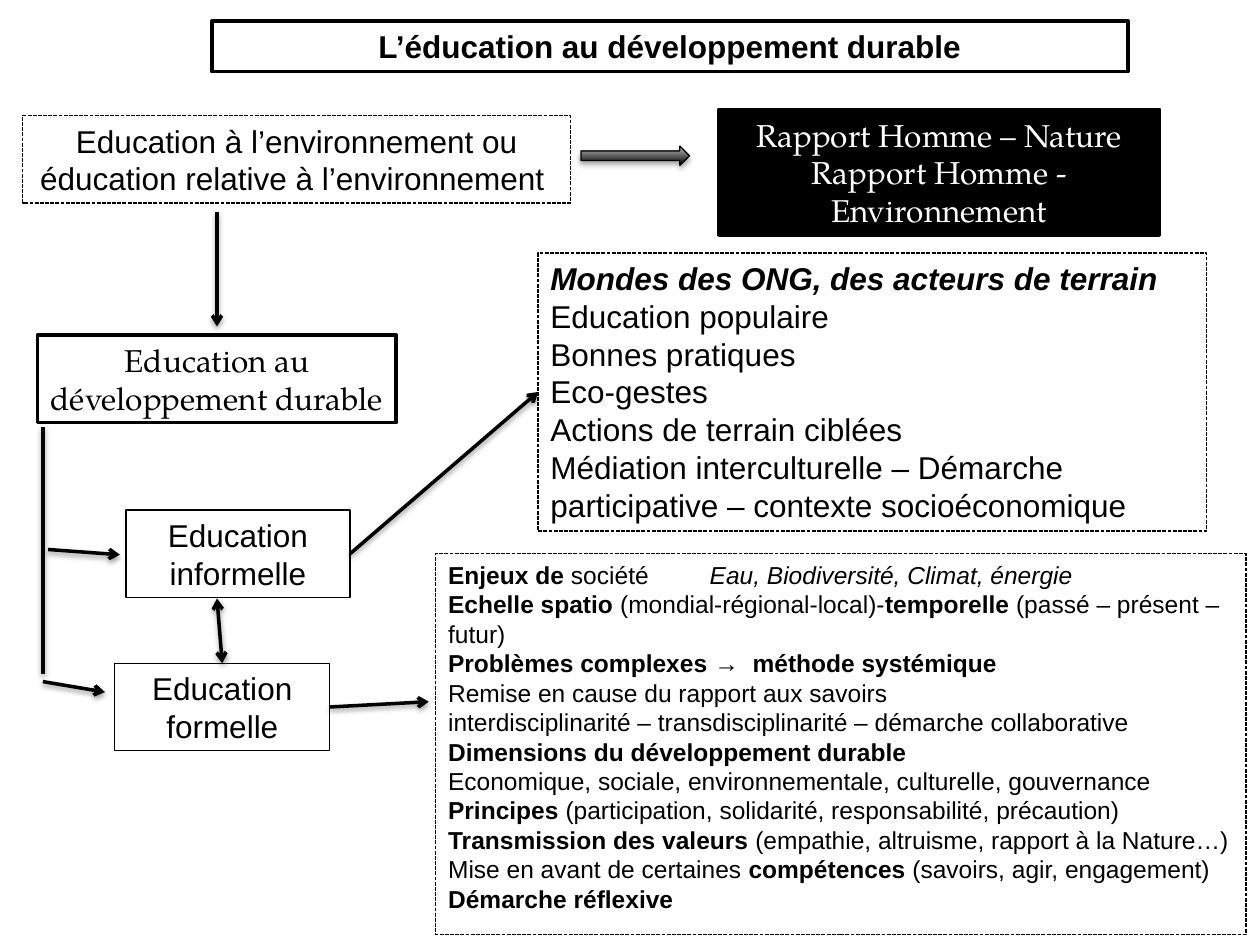
from lxml import etree
from pptx import Presentation
from pptx.dml.color import RGBColor
from pptx.enum.dml import MSO_LINE
from pptx.enum.shapes import MSO_CONNECTOR, MSO_SHAPE
from pptx.enum.text import MSO_ANCHOR, MSO_AUTO_SIZE, PP_ALIGN
from pptx.oxml.ns import qn
from pptx.util import Pt

STRAIGHT = MSO_CONNECTOR.STRAIGHT
DASH = MSO_LINE.SQUARE_DOT
LEFT, CENTER, JUSTIFY = PP_ALIGN.LEFT, PP_ALIGN.CENTER, PP_ALIGN.JUSTIFY
TOP_SIDE, LEFT_SIDE, BOTTOM_SIDE, RIGHT_SIDE = range(4)
COLORS = {"ink": "000000", "paper": "FFFFFF", "grey": "BDBDBD"}
RGB = {name: RGBColor.from_string(value) for name, value in COLORS.items()}
SANS, SERIF = "Arial", "TeX Gyre Pagella"


def write_box(box, paragraphs, align=CENTER, size=18, font=SANS, ink="ink",
              fill=None, weight=0.75, dash=None):
    """Frame a box and write its paragraphs, each a list of (text, style) runs."""
    if fill:
        box.fill.solid()
        box.fill.fore_color.rgb = RGB[fill]
    box.line.color.rgb = RGB["ink"]
    box.line.width = Pt(weight)
    if dash:
        box.line.dash_style = dash
    frame = box.text_frame
    frame.word_wrap = True
    frame.auto_size = MSO_AUTO_SIZE.NONE
    frame.vertical_anchor = MSO_ANCHOR.TOP
    for number, runs in enumerate(paragraphs):
        paragraph = frame.add_paragraph() if number else frame.paragraphs[0]
        paragraph.alignment = align
        for text, style in runs:
            run = paragraph.add_run()
            run.text = text
            run.font.name = font
            run.font.size = Pt(size)
            run.font.bold = "b" in style
            run.font.italic = "i" in style
            run.font.color.rgb = RGB[ink]


def add_shadow(shape, blur, distance, opacity):
    """Cast a soft black shadow straight down."""
    properties = shape._element.spPr
    for old in properties.findall(qn("a:effectLst")):
        properties.remove(old)
    effects = etree.SubElement(properties, qn("a:effectLst"))
    shadow = etree.SubElement(effects, qn("a:outerShdw"), blurRad=str(Pt(blur)),
                              dist=str(Pt(distance)), dir="5400000", rotWithShape="0")
    color = etree.SubElement(shadow, qn("a:srgbClr"), val=COLORS["ink"])
    etree.SubElement(color, qn("a:alpha"), val=str(opacity * 1000))


prs = Presentation()
prs.slide_width, prs.slide_height = Pt(720), Pt(540)
slide = prs.slides.add_slide(prs.slide_layouts[5])

title = slide.shapes.title
title.left, title.top, title.width, title.height = Pt(121), Pt(12), Pt(523.5), Pt(29)
write_box(title, [[("L’éducation au développement durable", "b")]],
          fill="paper", weight=2)

ngo_world = [
    [("Mondes des ONG, des acteurs de terrain", "bi")],
    [("Education populaire", "")],
    [("Bonnes pratiques", "")],
    [("Eco-gestes", "")],
    [("Actions de terrain ciblées", "")],
    [("Médiation interculturelle – Démarche participative – contexte socioéconomique", "")],
]
school_content = [
    [("Enjeux de ", "b"), ("société\t", ""), ("Eau, Biodiversité, Climat, énergie", "i")],
    [("Echelle spatio ", "b"), ("(mondial-régional-local)-", ""), ("temporelle", "b"),
     (" (passé – présent – futur)", "")],
    [("Problèmes complexes ", "b"), ("→  ", ""), ("méthode systémique", "b")],
    [("Remise en cause du rapport aux savoirs", "")],
    [("interdisciplinarité – transdisciplinarité – démarche collaborative", "")],
    [("Dimensions du développement durable", "b")],
    [("Economique, sociale, environnementale, culturelle, gouvernance", "")],
    [("Principes", "b"), (" (participation, solidarité, responsabilité, précaution)", "")],
    [("Transmission des valeurs ", "b"), ("(empathie, altruisme, rapport à la Nature…)", "")],
    [("Mise en avant de certaines ", ""), ("compétences", "b"),
     (" (savoirs, agir, engagement)", "")],
    [("Démarche réflexive", "b")],
]

# name: (left, top, width, height), paragraphs, formatting
contents = {
    "sustainable": ((21.5, 191.5, 205, 50), [[("Education au développement durable", "")]],
                    dict(font=SERIF, fill="paper", weight=2)),
    "environment": ((13, 66, 313, 50),
                    [[("Education à l’environnement ou éducation relative à l’environnement ", "")]],
                    dict(dash=DASH)),
    "relation": ((411, 62.5, 251.5, 72),
                 [[("Rapport Homme – Nature", "")], [("Rapport Homme - Environnement", "")]],
                 dict(font=SERIF, ink="paper", fill="ink", weight=2)),
    "formal": ((65.5, 379, 123, 50), [[("Education formelle", "")]], {}),
    "informal": ((72, 291.5, 128, 50), [[("Education informelle", "")]], {}),
    "ngo": ((307.5, 144.5, 382, 159), ngo_world, dict(align=LEFT, dash=DASH)),
    "school": ((249, 316.5, 463, 217.5), school_content,
               dict(align=LEFT, size=14, dash=DASH)),
}
boxes = {}
for name, (place, paragraphs, style) in contents.items():
    boxes[name] = slide.shapes.add_textbox(*map(Pt, place))
    write_box(boxes[name], paragraphs, **style)

school_lines = boxes["school"].text_frame.paragraphs
for line in school_lines[-2:]:
    line.alignment = JUSTIFY
tabs = etree.SubElement(school_lines[0]._p.get_or_add_pPr(), qn("a:tabLst"))
etree.SubElement(tabs, qn("a:tab"), pos=str(Pt(149.5)), algn="l")

relation_arrow = slide.shapes.add_shape(MSO_SHAPE.RIGHT_ARROW,
                                        Pt(332), Pt(83.5), Pt(62), Pt(11))
relation_arrow.fill.gradient()
relation_arrow.fill.gradient_angle = 90
for stop, color in zip(relation_arrow.fill.gradient_stops, ("ink", "grey")):
    stop.color.rgb = RGB[color]
relation_arrow.line.color.rgb = RGB["ink"]
relation_arrow.line.width = Pt(0.75)
add_shadow(relation_arrow, 3.1, 1.8, 35)

# start, end, arrowheads, joined start, joined end
links = [
    ((124, 121), (124, 186.5), ["tailEnd"], None, None),
    ((24.5, 244), (24.5, 385), [], None, None),
    ((27.5, 314), (68.5, 317), ["tailEnd"], None, None),
    ((24.5, 389.5), (60, 395.5), ["tailEnd"], None, None),
    ((188.5, 404), (245, 401), ["tailEnd"], ("formal", RIGHT_SIDE), None),
    ((200, 316.5), (307.5, 224), ["tailEnd"], ("informal", RIGHT_SIDE), ("ngo", LEFT_SIDE)),
    ((127, 379), (124, 342), ["headEnd", "tailEnd"], ("formal", TOP_SIDE), None),
]
for start, end, heads, source, target in links:
    link = slide.shapes.add_connector(STRAIGHT, *map(Pt, start + end))
    if source:
        link.begin_connect(boxes[source[0]], source[1])
    if target:
        link.end_connect(boxes[target[0]], target[1])
    link.line.color.rgb = RGB["ink"]
    link.line.width = Pt(2)
    for head in heads:
        etree.SubElement(link.line._get_or_add_ln(), qn(f"a:{head}"), type="arrow")
    add_shadow(link, 3.1, 1.6, 38)

prs.save("out.pptx")
